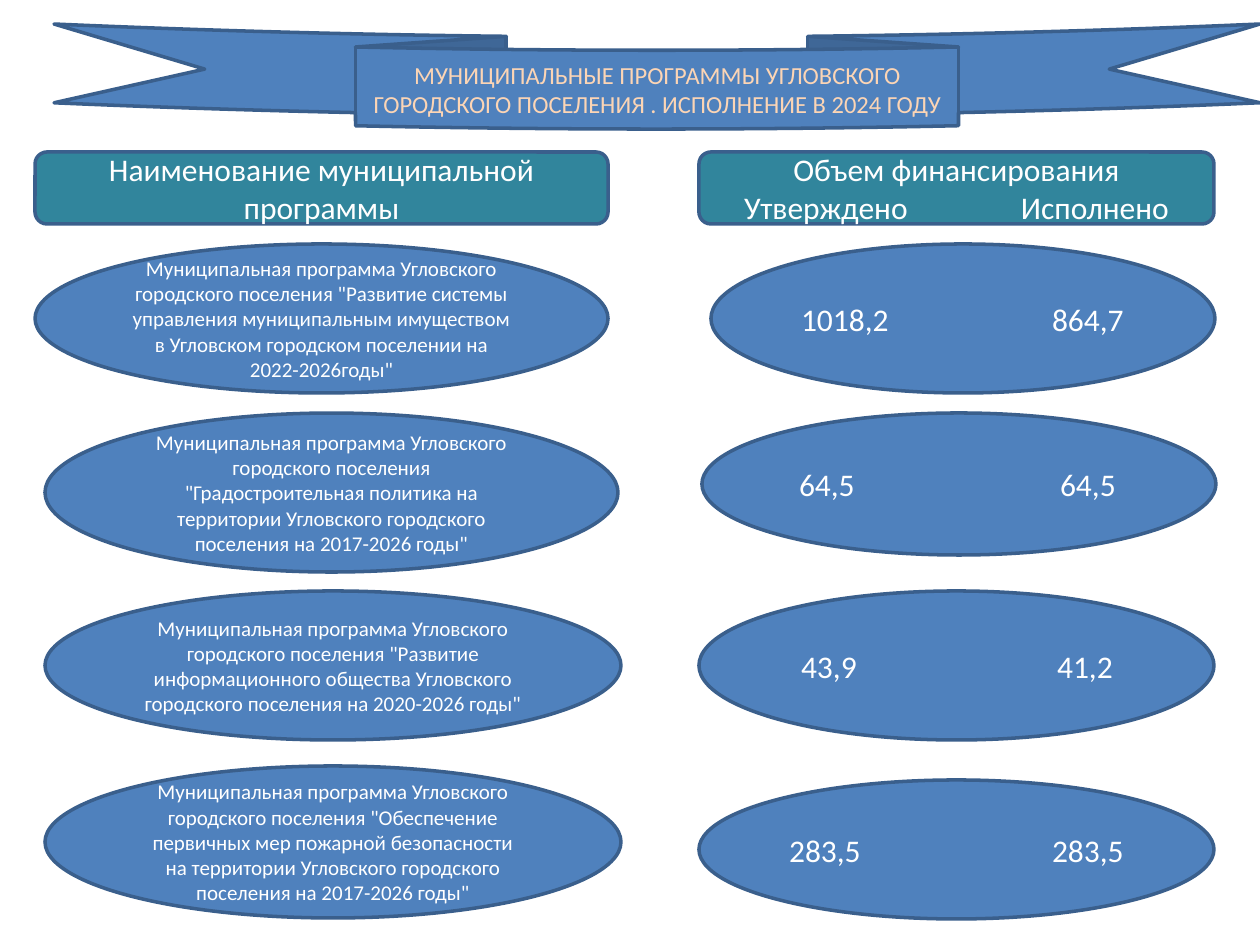
import math
from typing import NamedTuple

from pptx import Presentation
from pptx.dml.color import RGBColor
from pptx.enum.shapes import MSO_SHAPE
from pptx.enum.text import MSO_ANCHOR, MSO_AUTO_SIZE, PP_ALIGN
from pptx.oxml import parse_xml
from pptx.oxml.ns import nsdecls
from pptx.util import Pt

RIBBON = MSO_SHAPE.CURVED_DOWN_RIBBON
ROUNDED = MSO_SHAPE.ROUNDED_RECTANGLE
OVAL = MSO_SHAPE.OVAL
CENTER, LEFT = PP_ALIGN.CENTER, PP_ALIGN.LEFT
MIDDLE = MSO_ANCHOR.MIDDLE
NO_AUTOFIT = MSO_AUTO_SIZE.NONE

COLORS = {
    "blue": "4F81BD",
    "teal": "31859C",
    "outline": "3A5F8C",
    "white": "FFFFFF",
    "peach": "FCD5B5",
}
FONT = "Calibri"
EMU_PER_PX = 914400 / 126
TITLE_ONLY = 5
# Share of an oval's width, or of a rounded corner's height, outside its text area
OVAL_INSET = (1 - math.sqrt(0.5)) / 2
CORNER_INSET = OVAL_INSET / 3


class Box(NamedTuple):
    left: int
    top: int
    width: int
    height: int


class Program(NamedTuple):
    name: str
    name_box: Box
    approved: str
    executed: str
    amount_box: Box
    centers: tuple[int, int]


PROGRAMS = [
    Program('Муниципальная программа Угловского городского поселения "Развитие системы '
            'управления муниципальным имуществом в Угловском городском поселении на '
            '2022-2026годы"', Box(35, 244, 573, 149),
            "1018,2", "864,7", Box(711, 244, 504, 149), (845, 1088)),
    Program('Муниципальная программа Угловского городского поселения '
            '"Градостроительная политика на территории Угловского городского поселения '
            'на 2017-2026 годы"', Box(45, 413, 573, 159),
            "64,5", "64,5", Box(702, 413, 514, 142), (827, 1088)),
    Program('Муниципальная программа Угловского городского поселения "Развитие '
            'информационного общества Угловского городского поселения на 2020-2026 годы"',
            Box(45, 591, 576, 149),
            "43,9", "41,2", Box(699, 591, 515, 149), (829, 1085)),
    Program('Муниципальная программа Угловского городского поселения "Обеспечение '
            'первичных мер пожарной безопасности на территории Угловского городского '
            'поселения на 2017-2026 годы"', Box(45, 766, 576, 152),
            "283,5", "283,5", Box(699, 780, 515, 139), (825, 1088)),
]


def px(value: float) -> int:
    return round(value * EMU_PER_PX)


def place(shape, box: Box) -> None:
    shape.left, shape.top, shape.width, shape.height = map(px, box)


def add_box(slide, kind, box: Box, fill: str = "blue"):
    shape = slide.shapes.add_shape(kind, *map(px, box))
    shape.shadow.inherit = False
    shape.fill.solid()
    shape.fill.fore_color.rgb = RGBColor.from_string(COLORS[fill])
    shape.line.color.rgb = RGBColor.from_string(COLORS["outline"])
    shape.line.width = Pt(2)
    return shape


def write(paragraph, text: str, *, size: int = 18, color: str = "white", align=CENTER) -> None:
    paragraph.alignment = align
    run = paragraph.add_run()
    run.text = text
    run.font.name = FONT
    run.font.size = Pt(size)
    run.font.color.rgb = RGBColor.from_string(COLORS[color])


def prepare_text(shape):
    frame = shape.text_frame
    frame.word_wrap = True
    frame.auto_size = NO_AUTOFIT
    frame.vertical_anchor = MIDDLE
    return frame.paragraphs[0]


def write_pair(shape, paragraph, texts: tuple[str, str], centers: tuple[int, int],
               text_left: float) -> None:
    """Write two texts on one line, each centred on its own tab stop."""
    shape.text_frame.margin_left = shape.text_frame.margin_right = 0
    write(paragraph, "".join("\t" + text for text in texts), align=LEFT)
    stops = "".join(f'<a:tab pos="{px(center - text_left)}" algn="ctr"/>' for center in centers)
    tab_list = parse_xml(f'<a:tabLst {nsdecls("a")}>{stops}</a:tabLst>')
    paragraph._p.get_or_add_pPr().append(tab_list)


def add_program(slide, program: Program) -> None:
    name = add_box(slide, OVAL, program.name_box)
    write(prepare_text(name), program.name, size=12)
    amounts = add_box(slide, OVAL, program.amount_box)
    text_left = program.amount_box.left + program.amount_box.width * OVAL_INSET
    write_pair(amounts, prepare_text(amounts), (program.approved, program.executed),
               program.centers, text_left)


def main() -> None:
    presentation = Presentation()
    presentation.slide_width, presentation.slide_height = px(1260), px(945)
    slide = presentation.slides.add_slide(presentation.slide_layouts[TITLE_ONLY])

    # Title on the ribbon; the ribbon goes behind the placeholder
    ribbon = add_box(slide, RIBBON, Box(54, 24, 1206, 105))
    title = slide.shapes.title
    title._element.addprevious(ribbon._element)
    place(title, Box(356, 50, 603, 78))
    write(prepare_text(title), "МУНИЦИПАЛЬНЫЕ ПРОГРАММЫ УГЛОВСКОГО ГОРОДСКОГО ПОСЕЛЕНИЯ . "
          "ИСПОЛНЕНИЕ В 2024 ГОДУ", size=14, color="peach")

    # Column headings
    name_heading = add_box(slide, ROUNDED, Box(35, 152, 573, 72), "teal")
    write(prepare_text(name_heading), "Наименование муниципальной программы")
    amount_box = Box(699, 152, 515, 72)
    amount_heading = add_box(slide, ROUNDED, amount_box, "teal")
    write(prepare_text(amount_heading), "Объем финансирования")
    write_pair(amount_heading, amount_heading.text_frame.add_paragraph(),
               ("Утверждено", "Исполнено"), (826, 1095),
               amount_box.left + amount_box.height * CORNER_INSET)

    # Programs with their approved and executed amounts
    for program in PROGRAMS:
        add_program(slide, program)

    presentation.save("out.pptx")


if __name__ == "__main__":
    main()
